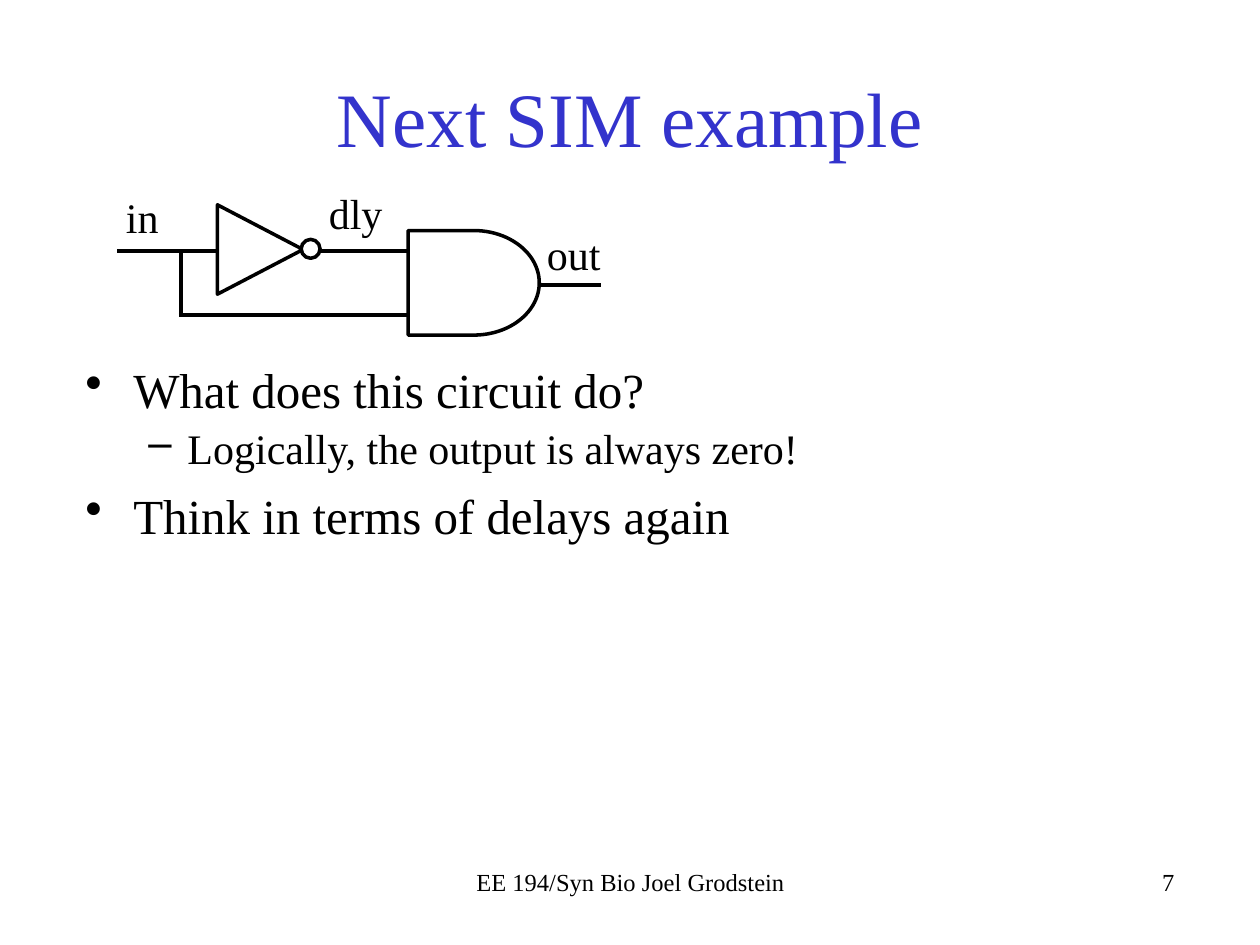
"""Builds the slide 'Next SIM example' with its gate circuit."""
from dataclasses import dataclass

from lxml import etree
from pptx import Presentation
from pptx import util as u
from pptx.dml.color import RGBColor
from pptx.enum import shapes, text
from pptx.oxml.ns import qn


@dataclass(frozen=True)
class Theme:
    font: str = "Times New Roman"
    ink: RGBColor = RGBColor(0, 0, 0)
    paper: RGBColor = RGBColor(255, 255, 255)
    heading: RGBColor = RGBColor(0x33, 0x33, 0xCC)
    title_size: float = 44
    body_sizes: tuple = (28, 24)
    label_size: float = 24
    footer_size: float = 14
    wire: float = 2.25
    outline: float = 2


class SlideBuilder:
    bullets = (("•", 0.38, -0.38), ("–", 0.81, -0.31))

    def __init__(self, prs, theme):
        self.theme = theme
        self.slide = prs.slides.add_slide(prs.slide_layouts[5])
        self.circuit = None

    def run(self, p, words, size, color=None):
        r = p.add_run()
        r.text = words
        r.font.name = self.theme.font
        r.font.size = u.Pt(size)
        r.font.color.rgb = color or self.theme.ink

    def title(self, words, box):
        sp = self.slide.shapes.title
        sp.left, sp.top, sp.width, sp.height = map(u.Inches, box)
        tf = sp.text_frame
        tf.vertical_anchor = text.MSO_ANCHOR.MIDDLE
        p = tf.paragraphs[0]
        p.alignment = text.PP_ALIGN.CENTER
        self.run(p, words, self.theme.title_size, self.theme.heading)

    def footer(self, words, box, align):
        tf = self.slide.shapes.add_textbox(*map(u.Inches, box)).text_frame
        tf.word_wrap = True
        p = tf.paragraphs[0]
        p.alignment = align
        self.run(p, words, self.theme.footer_size)

    def body(self, items, box):
        tf = self.slide.shapes.add_textbox(*map(u.Inches, box)).text_frame
        tf.word_wrap = True
        for i, (level, before, words) in enumerate(items):
            p = tf.add_paragraph() if i else tf.paragraphs[0]
            p.level = level
            p.space_before = u.Pt(before)
            mark, margin, indent = self.bullets[level]
            pPr = p._p.get_or_add_pPr()
            pPr.set("marL", str(u.Inches(margin)))
            pPr.set("indent", str(u.Inches(indent)))
            etree.SubElement(pPr, qn("a:buChar")).set("char", mark)
            self.run(p, words, self.theme.body_sizes[level])

    def start_circuit(self):
        self.circuit = self.slide.shapes.add_group_shape().shapes

    def wire(self, *ends):
        line = self.circuit.add_connector(
            shapes.MSO_CONNECTOR.STRAIGHT, *map(u.Inches, ends))
        line.line.color.rgb = self.theme.ink
        line.line.width = u.Pt(self.theme.wire)
        etree.SubElement(line._element.spPr, qn("a:effectLst"))

    def gate(self, kind, box, rotation=0):
        sp = self.circuit.add_shape(kind, *map(u.Inches, box))
        sp.rotation = rotation
        sp.shadow.inherit = False
        sp.fill.solid()
        sp.fill.fore_color.rgb = self.theme.paper
        sp.line.color.rgb = self.theme.ink
        sp.line.width = u.Pt(self.theme.outline)

    def label(self, words, box):
        tf = self.circuit.add_textbox(*map(u.Inches, box)).text_frame
        tf.margin_left = tf.margin_top = tf.margin_right = tf.margin_bottom = 0
        tf.word_wrap = False
        tf.auto_size = text.MSO_AUTO_SIZE.SHAPE_TO_FIT_TEXT
        self.run(tf.paragraphs[0], words, self.theme.label_size)


def main():
    prs = Presentation()
    prs.slide_width, prs.slide_height = u.Inches(10), u.Inches(7.5)
    s = SlideBuilder(prs, Theme())

    s.footer("7", (6.25, 6.83, 3.17, 0.5), text.PP_ALIGN.RIGHT)
    s.title("Next SIM example", (0.75, 0.3, 8.5, 1.25))
    s.body([(0, 3, "What does this circuit do?"),
            (1, 2.5, "Logically, the output is always zero!"),
            (0, 7.5, "Think in terms of delays again")],
           (0.58, 2.8, 8.87, 2.05))
    s.footer("EE 194/Syn Bio Joel Grodstein", (3.42, 6.83, 3.17, 0.5),
             text.PP_ALIGN.CENTER)

    s.start_circuit()
    for ends in ((0.93, 1.99, 3.46, 1.99), (1.42, 2.5, 3.38, 2.5),
                 (1.44, 1.98, 1.44, 2.5), (4.77, 2.26, 3.95, 2.26)):
        s.wire(*ends)
    kinds = shapes.MSO_SHAPE
    s.gate(kinds.FLOWCHART_DELAY, (3.24, 1.83, 1.04, 0.83))
    s.gate(kinds.FLOWCHART_MERGE, (1.71, 1.64, 0.71, 0.68), 270)
    s.gate(kinds.OVAL, (2.39, 1.9, 0.15, 0.15))
    s.label("in", (1, 1.52, 0.26, 0.4))
    s.label("dly", (2.61, 1.49, 0.43, 0.4))
    s.label("out", (4.34, 1.81, 0.43, 0.4))

    prs.save("out.pptx")


if __name__ == "__main__":
    main()
